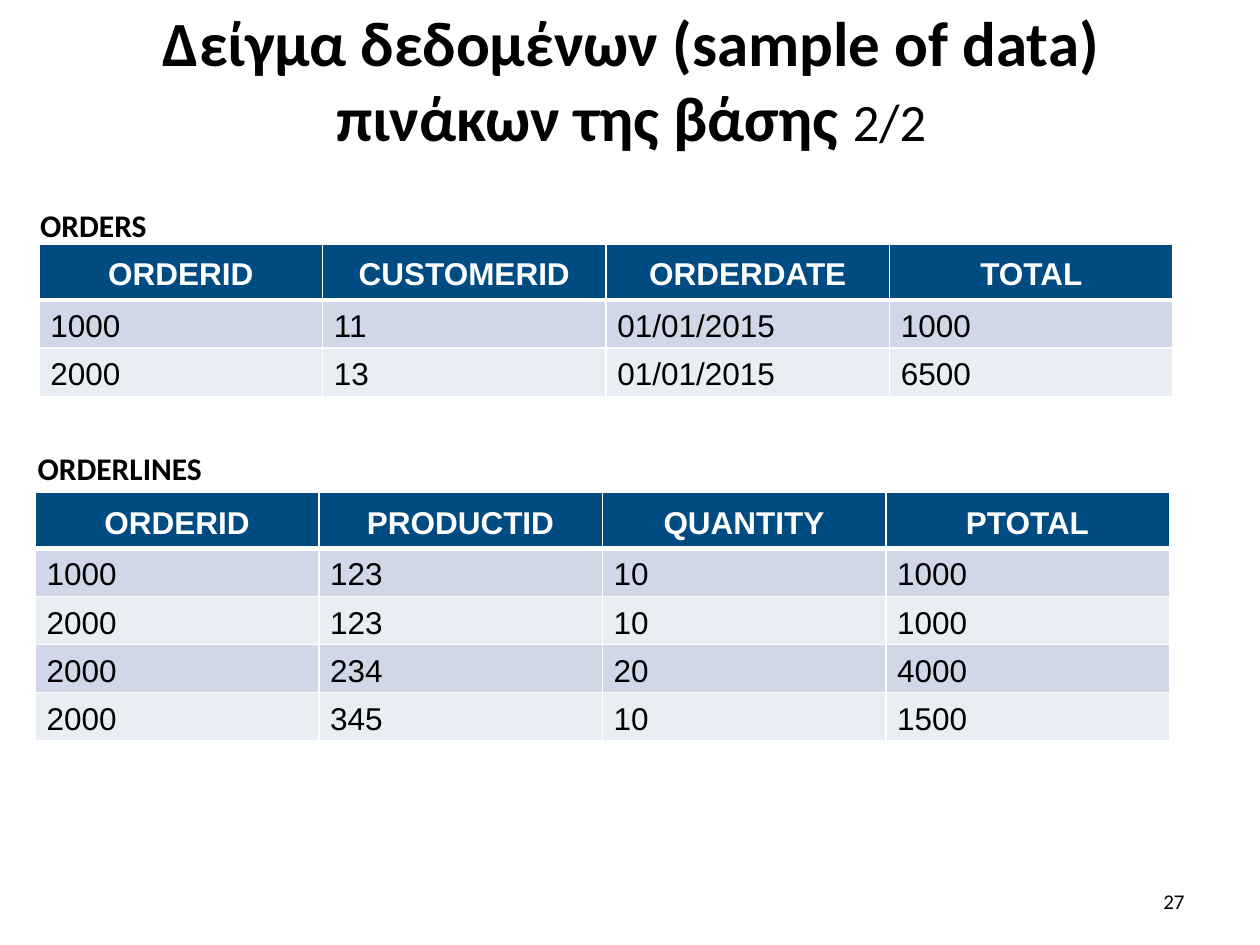
from lxml import etree
from pptx import Presentation
from pptx.dml.color import RGBColor
from pptx.enum.text import MSO_ANCHOR, MSO_AUTO_SIZE, PP_ALIGN
from pptx.oxml.ns import qn
from pptx.util import Inches, Pt

TOP, MIDDLE, BOTTOM = MSO_ANCHOR.TOP, MSO_ANCHOR.MIDDLE, MSO_ANCHOR.BOTTOM
LEFT, CENTER, RIGHT = PP_ALIGN.LEFT, PP_ALIGN.CENTER, PP_ALIGN.RIGHT
BLACK = RGBColor(0x00, 0x00, 0x00)
WHITE = RGBColor(0xFF, 0xFF, 0xFF)
NAVY = RGBColor(0x00, 0x4B, 0x82)
BANDS = [RGBColor(0xE9, 0xED, 0xF4), RGBColor(0xD0, 0xD8, 0xE8)]

COL_W, HEAD_H, ROW_H = 2.25, 0.44, 0.38


def style_run(r, size, font, color=BLACK, bold=False):
    r.font.size = Pt(size)
    r.font.name = font
    r.font.color.rgb = color
    r.font.bold = bold


def set_borders(cell, widths):
    """Put white borders before the cell's fill; widths in points by side."""
    tcPr = cell._tc.get_or_add_tcPr()
    for i, (side, width) in enumerate(widths.items()):
        ln = etree.Element(qn("a:ln" + side), w=str(Pt(width)))
        fill = etree.SubElement(ln, qn("a:solidFill"))
        etree.SubElement(fill, qn("a:srgbClr"), val=str(WHITE))
        tcPr.insert(i, ln)


prs = Presentation()
prs.slide_width, prs.slide_height = Inches(10), Inches(7.5)
s = prs.slides.add_slide(prs.slide_layouts[5])

# Title
title = s.shapes.title
title.left, title.top = Inches(0.51), Inches(0.13)
title.width, title.height = Inches(9), Inches(0.99)
tf = title.text_frame
tf.word_wrap = True
tf.auto_size = MSO_AUTO_SIZE.NONE
tf.vertical_anchor = MIDDLE
p = tf.paragraphs[0]
p.alignment = CENTER
for text, size, bold in [
    ("Δείγμα δεδομένων (sample of data) πινάκων της βάσης ", 36, True),
    ("2/2", 30, False),
]:
    r = p.add_run()
    r.text = text
    style_run(r, size, "Calibri", bold=bold)

# Data tables
tables = [
    (0.31, 1.94, [
        ["ORDERID", "CUSTOMERID", "ORDERDATE", "TOTAL"],
        ["1000", "11", "01/01/2015", "1000"],
        ["2000", "13", "01/01/2015", "6500"],
    ]),
    (0.28, 3.91, [
        ["ORDERID", "PRODUCTID", "QUANTITY", "PTOTAL"],
        ["1000", "123", "10", "1000"],
        ["2000", "123", "10", "1000"],
        ["2000", "234", "20", "4000"],
        ["2000", "345", "10", "1500"],
    ]),
]
for left, top, rows in tables:
    n_cols = len(rows[0])
    height = HEAD_H + ROW_H * (len(rows) - 1)
    table = s.shapes.add_table(
        len(rows), n_cols, Inches(left), Inches(top),
        Inches(COL_W * n_cols), Inches(height)).table
    for i, values in enumerate(rows):
        head = i == 0
        table.rows[i].height = Inches(HEAD_H if head else ROW_H)
        for j, value in enumerate(values):
            cell = table.cell(i, j)
            cell.fill.solid()
            cell.fill.fore_color.rgb = NAVY if head else BANDS[i % 2]
            cell.vertical_anchor = BOTTOM if head else MIDDLE
            cell.margin_left = cell.margin_right = Inches(0.09)
            cell.margin_top = cell.margin_bottom = Inches(0.06 if head else 0.03)
            set_borders(cell, {"L": 1, "R": 1, "T": 3 if i == 1 else 1,
                               "B": 3 if head else 1})
            p = cell.text_frame.paragraphs[0]
            p.text = value
            p.alignment = CENTER if head else LEFT
            p.line_spacing = 1.15
            p.space_after = Pt(10)
            style_run(p.runs[0], 18, "Arial", WHITE if head else BLACK, head)

# Table captions and page number
for text, left, top, width, height, anchor, align, size, bold in [
    ("ORDERLINES", 0.2, 3.2, 5, 0.71, BOTTOM, LEFT, 18, True),
    ("ORDERS", 0.22, 1.39, 1.4, 0.59, BOTTOM, LEFT, 18, True),
    ("27", 7.17, 6.95, 2.33, 0.4, MIDDLE, RIGHT, 12, False),
]:
    sp = s.shapes.add_textbox(Inches(left), Inches(top), Inches(width), Inches(height))
    tf = sp.text_frame
    tf.word_wrap = True
    tf.vertical_anchor = anchor
    tf.text = text
    p = tf.paragraphs[0]
    p.alignment = align
    style_run(p.runs[0], size, "Calibri", bold=bold)

prs.save("out.pptx")
